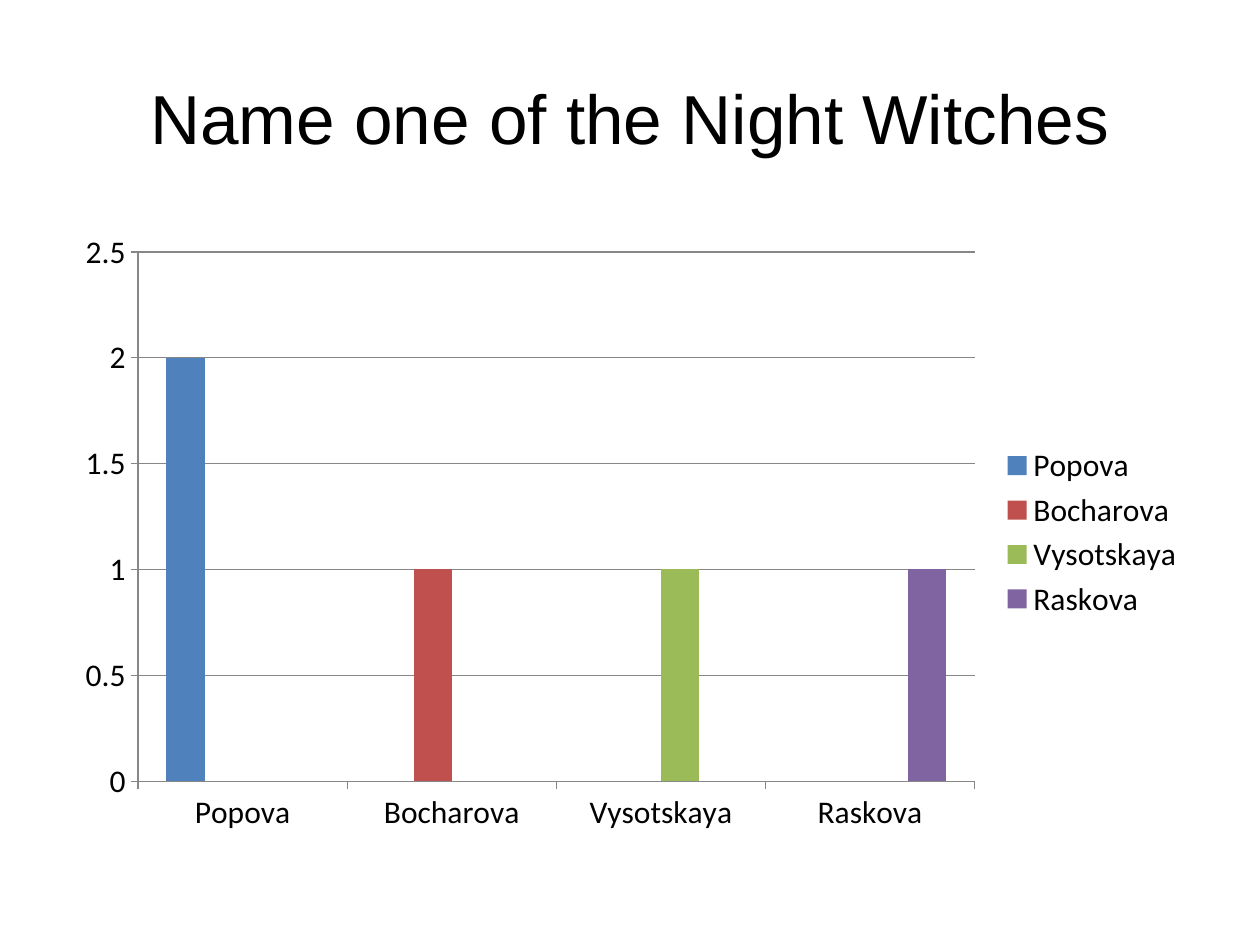
from pptx import Presentation
from pptx.chart.data import CategoryChartData
from pptx.dml.color import RGBColor
from pptx.enum.chart import XL_CHART_TYPE as ChartType, XL_LEGEND_POSITION as LegendPos
from pptx.enum.chart import XL_TICK_MARK as Tick
from pptx.enum.text import MSO_ANCHOR as Anchor, PP_ALIGN as Align
from pptx.util import Pt

VOTES = {"Popova": 2, "Bocharova": 1, "Vysotskaya": 1, "Raskova": 1}
BAR_COLORS = ["4F81BD", "C0504D", "9BBB59", "8064A2"]


def rgb(value):
    return RGBColor.from_string(value)


def apply(target, formats):
    for name, value in formats.items():
        setattr(target, name, value)


class SlideBuilder:
    ink = "000000"
    rule = "878787"
    title_font = {"name": "Arial", "size": Pt(39.6)}
    chart_font = {"name": "Calibri", "size": Pt(18)}

    def __init__(self, s):
        self.s = s

    def style_font(self, font, formats):
        apply(font, formats)
        font.color.rgb = rgb(self.ink)

    def style_line(self, line):
        line.color.rgb = rgb(self.rule)
        line.width = Pt(0.75)

    def title(self, text, *box):
        tf = self.s.shapes.add_textbox(*map(Pt, box)).text_frame
        apply(tf, {"word_wrap": True, "vertical_anchor": Anchor.MIDDLE})
        p = tf.paragraphs[0]
        p.alignment = Align.CENTER
        r = p.add_run()
        r.text = text
        self.style_font(r.font, self.title_font)

    def vote_chart(self, votes, colors, *box):
        """Column chart with one series per name, filled only in its own category."""
        data = CategoryChartData()
        data.categories = list(votes)
        for name in votes:
            data.add_series(name, [n if key == name else None for key, n in votes.items()])
        chart = self.s.shapes.add_chart(
            ChartType.COLUMN_CLUSTERED, *map(Pt, box), data).chart
        apply(chart, {"has_title": False, "has_legend": True})
        self.style_font(chart.font, self.chart_font)
        apply(chart.legend, {"position": LegendPos.RIGHT, "include_in_layout": False})

        plot = chart.plots[0]
        apply(plot, {"gap_width": 150, "overlap": 0, "vary_by_categories": False})
        for series, color in zip(plot.series, colors):
            series.format.fill.solid()
            series.format.fill.fore_color.rgb = rgb(color)

        for axis in (chart.category_axis, chart.value_axis):
            apply(axis, {"major_tick_mark": Tick.OUTSIDE, "minor_tick_mark": Tick.NONE})
            self.style_line(axis.format.line)
        apply(chart.value_axis, {"minimum_scale": 0, "maximum_scale": 2.5,
                                 "major_unit": 0.5, "has_major_gridlines": True})
        self.style_line(chart.value_axis.major_gridlines.format.line)


def main():
    prs = Presentation()
    apply(prs, {"slide_width": Pt(720), "slide_height": Pt(540)})
    s = prs.slides.add_slide(prs.slide_layouts[6])
    builder = SlideBuilder(s)
    builder.title("Name one of the Night Witches", 36, 21.6, 648, 90)
    builder.vote_chart(VOTES, BAR_COLORS, 36, 126, 648, 356.4)
    prs.save("out.pptx")


if __name__ == "__main__":
    main()
